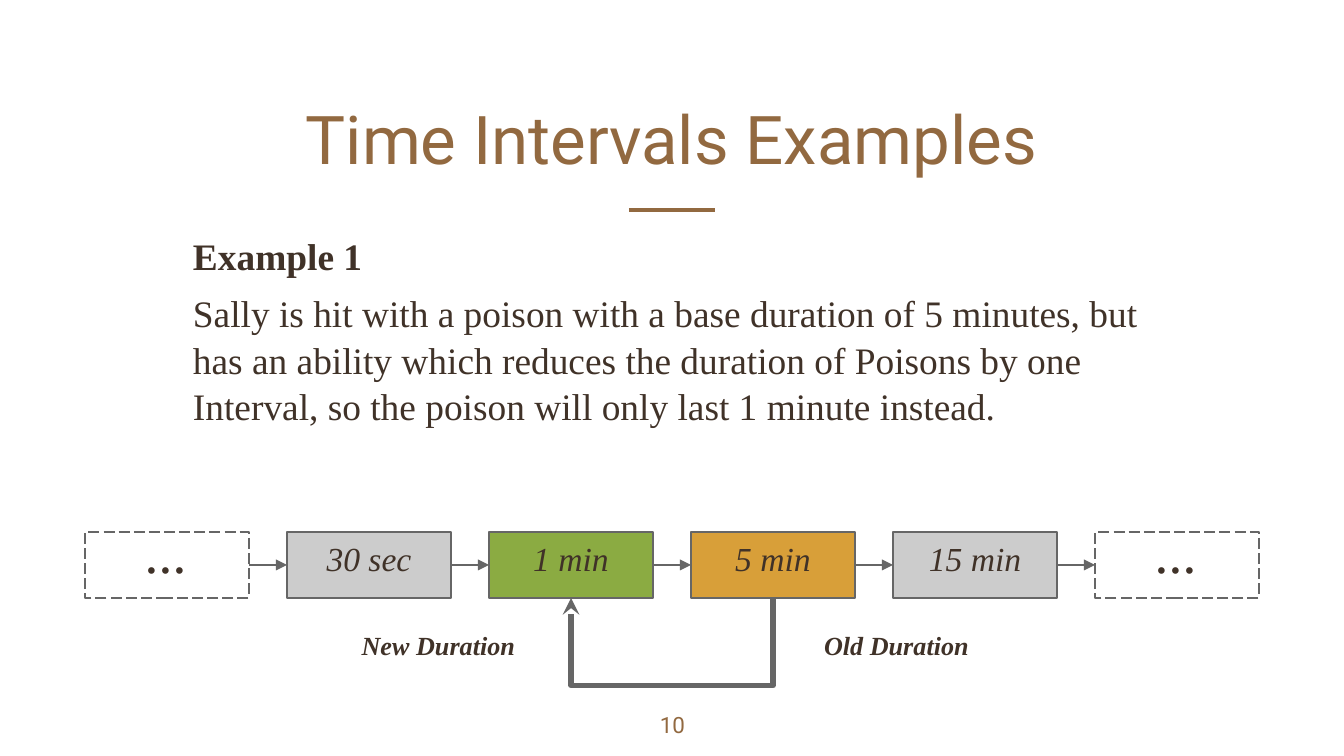
"""Build the Time Intervals Examples slide with its chain of durations."""
import pptx
import pptx.util
import pptx.dml.color
import pptx.enum.dml
import pptx.enum.shapes
import pptx.enum.text
import pptx.oxml.ns
from lxml import etree

COLORS = {"brown": "926940", "ink": "403228", "line": "666666",
          "gray": "CCCCCC", "green": "8BAB42", "amber": "D89F39"}
TITLE = "Time Intervals Examples"
PAGE_NUMBER = "10"
EXAMPLE = [
    ("Example 1", True),
    ("Sally is hit with a poison with a base duration of 5 minutes, but has an "
     "ability which reduces the duration of Poisons by one Interval, so the "
     "poison will only last 1 minute instead.", False),
]
INTERVALS = [("...", None), ("30 sec", "gray"), ("1 min", "green"),
             ("5 min", "amber"), ("15 min", "gray"), ("...", None)]
NEW_INDEX, OLD_INDEX = 2, 3
CAPTIONS = [("New Duration", 333, 211), ("Old Duration", 800, 193)]

CHAIN_LEFT, CHAIN_TOP, CHAIN_PITCH = 85, 532, 202
BOX_WIDTH, BOX_HEIGHT = 164, 66
LOOP_DEPTH = 73
INSET = 13
TOP, LEFT, BOTTOM, RIGHT = range(4)

ALIGN = pptx.enum.text.PP_ALIGN
ANCHOR = pptx.enum.text.MSO_ANCHOR
CONNECTOR = pptx.enum.shapes.MSO_CONNECTOR


def px(length):
    return round(length * 914400 / 134.4)


def color(name):
    return pptx.dml.color.RGBColor.from_string(COLORS[name])


def write(shape, paragraphs, size=18, font="Times New Roman", ink="ink", italic=False,
          align=ALIGN.CENTER, anchor=ANCHOR.TOP, insets=(INSET,) * 4, before=0, spacing=1.0):
    frame = shape.text_frame
    frame.word_wrap = True
    frame.vertical_anchor = anchor
    frame.margin_left, frame.margin_top, frame.margin_right, frame.margin_bottom = map(px, insets)
    for index, (text, bold) in enumerate(paragraphs):
        paragraph = frame.add_paragraph() if index else frame.paragraphs[0]
        paragraph.alignment = align
        paragraph.line_spacing = spacing
        if index:
            paragraph.space_before = pptx.util.Pt(before)
        run = paragraph.add_run()
        run.text = text
        run.font.name = font
        run.font.size = pptx.util.Pt(size)
        run.font.bold = bold
        run.font.italic = italic
        run.font.color.rgb = color(ink)


def add_text(slide, box, paragraphs, **style):
    write(slide.shapes.add_textbox(*map(px, box)), paragraphs, **style)


def add_line(slide, kind, points, ink, weight, head=None):
    line = slide.shapes.add_connector(kind, *map(px, points))
    line.line.color.rgb = color(ink)
    line.line.width = pptx.util.Pt(weight)
    if head:
        etree.SubElement(line.line._get_or_add_ln(), pptx.oxml.ns.qn("a:tailEnd"), type=head)
    etree.SubElement(line._element.spPr, pptx.oxml.ns.qn("a:effectLst"))
    return line


def add_interval(slide, index, label, fill):
    box = slide.shapes.add_shape(
        pptx.enum.shapes.MSO_SHAPE.RECTANGLE,
        *map(px, (CHAIN_LEFT + index * CHAIN_PITCH, CHAIN_TOP, BOX_WIDTH, BOX_HEIGHT)))
    box.shadow.inherit = False
    box.line.color.rgb = color("line")
    box.line.width = pptx.util.Pt(0.75)
    if fill:
        box.fill.solid()
        box.fill.fore_color.rgb = color(fill)
    else:
        box.fill.background()
        box.line.dash_style = pptx.enum.dml.MSO_LINE.LONG_DASH
    write(box, [(label, False)], size=18 if fill else 30, italic=True,
          anchor=ANCHOR.MIDDLE if fill else ANCHOR.BOTTOM, insets=(0, 0, 0, INSET))
    return box


def add_loop(slide, old, new):
    loop = add_line(slide, CONNECTOR.ELBOW, (0, 0, 1, 1), "line", 3, "stealth")
    loop.begin_connect(old, BOTTOM)
    loop.end_connect(new, BOTTOM)
    thickness, span = 600, old.left - new.left
    frame = loop._element.spPr.xfrm
    frame.flipH = frame.flipV = False
    frame.set("rot", str(90 * 60000))
    loop.width, loop.height = thickness, span
    loop.left = (old.left + new.left + old.width) // 2
    loop.top = old.top + old.height - span // 2
    guides = loop._element.spPr.find(pptx.oxml.ns.qn("a:prstGeom")).get_or_add_avLst()
    etree.SubElement(guides, pptx.oxml.ns.qn("a:gd"), name="adj1",
                     fmla=f"val {px(LOOP_DEPTH) * 100000 // thickness}")


def main():
    deck = pptx.Presentation()
    deck.slide_width, deck.slide_height = px(1344), px(756)
    slide = deck.slides.add_slide(deck.slide_layouts[6])

    add_line(slide, CONNECTOR.STRAIGHT, (629, 210, 715, 210), "brown", 2.25)
    add_text(slide, (138, 65, 1067, 126), [(TITLE, False)], size=36,
             font="Roboto", ink="brown", anchor=ANCHOR.BOTTOM)
    add_text(slide, (632, 698, 81, 58), [(PAGE_NUMBER, False)], size=12,
             font="Roboto", ink="brown")
    add_text(slide, (180, 218, 984, 507), EXAMPLE, size=20, align=ALIGN.LEFT,
             before=6, spacing=1.04)

    chain = [add_interval(slide, index, *interval) for index, interval in enumerate(INTERVALS)]
    for before, after in zip(chain, chain[1:]):
        arrow = add_line(slide, CONNECTOR.STRAIGHT, (0, 0, 1, 1), "line", 0.75, "triangle")
        arrow.begin_connect(before, RIGHT)
        arrow.end_connect(after, LEFT)
    add_loop(slide, chain[OLD_INDEX], chain[NEW_INDEX])
    for caption, left, width in CAPTIONS:
        add_text(slide, (left, 616, width, 66), [(caption, True)], size=14, italic=True)

    deck.save("out.pptx")


if __name__ == "__main__":
    main()
